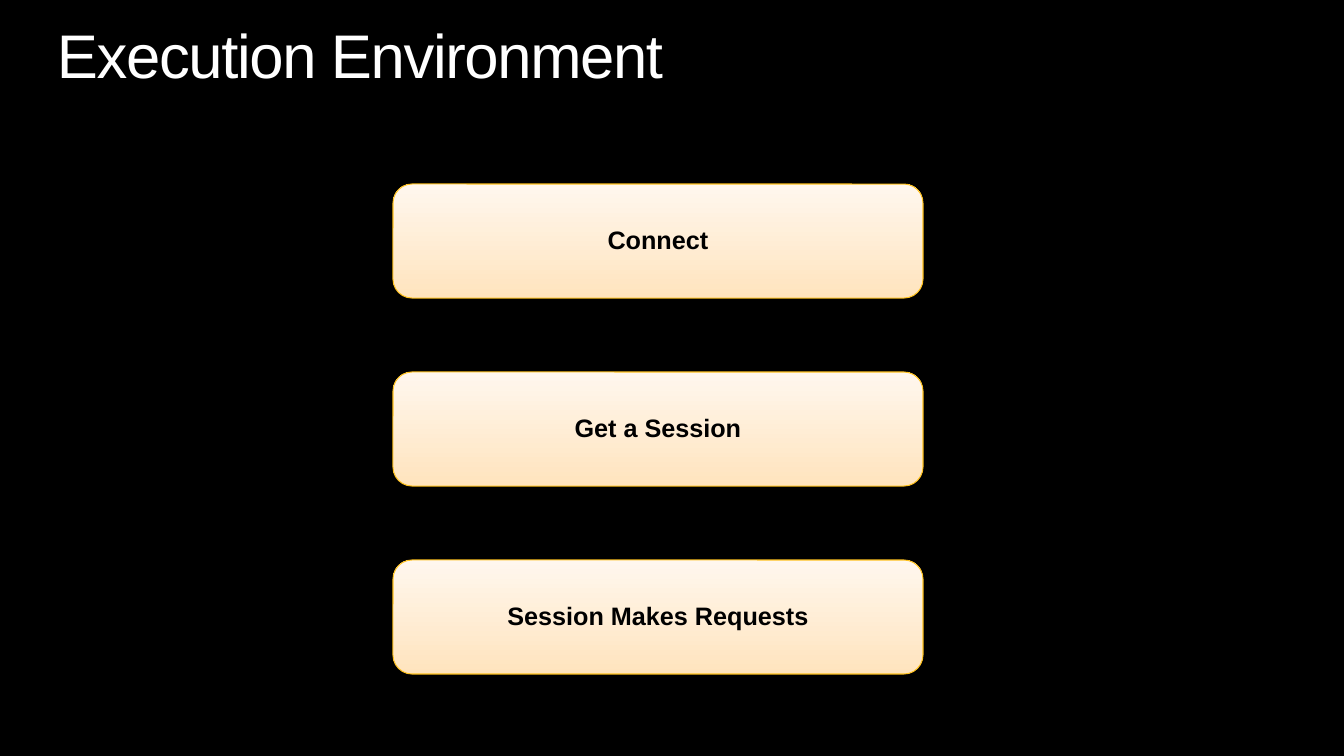
from pptx import Presentation
from pptx import util as u
from pptx.dml.color import RGBColor
from pptx.enum import shapes, text

W, H = 1344, 756
SCALE = 12192000 / W  # EMU per px
FONT = "Arial"
STEPS = ["Connect", "Get a Session", "Session Makes Requests"]
STEP_LEFT, STEP_TOP, STEP_W, STEP_H, STEP_PITCH = 393, 184, 530, 114, 188


def px(n):
    return u.Emu(round(n * SCALE))


def rgb(value):
    return RGBColor.from_string(value)


def set_frame(tf, anchor, margin):
    tf.word_wrap = True
    tf.vertical_anchor = anchor
    tf.margin_left = tf.margin_right = tf.margin_top = tf.margin_bottom = px(margin)


def set_paragraph(p, align, size, color, bold):
    p.alignment = align
    p.line_spacing = 0.9
    p.font.name = FONT
    p.font.size = u.Pt(size)
    p.font.bold = bold
    p.font.color.rgb = rgb(color)


def add_title(s, words):
    title = s.shapes.title
    title.left, title.top, title.width, title.height = px(57), px(25), px(1229), px(67)
    tf = title.text_frame
    tf.text = words
    set_frame(tf, text.MSO_ANCHOR.TOP, 0)
    p = tf.paragraphs[0]
    set_paragraph(p, text.PP_ALIGN.LEFT, 44, "FFFFFF", False)
    p.runs[0].font._element.set("spc", "-100")


def add_step(s, words, top):
    sp = s.shapes.add_shape(shapes.MSO_SHAPE.ROUNDED_RECTANGLE,
                            px(STEP_LEFT), px(top), px(STEP_W), px(STEP_H))
    sp.shadow.inherit = False
    sp.fill.gradient()
    sp.fill.gradient_angle = 90
    for stop, color in zip(sp.fill.gradient_stops, ("FFE4BE", "FFF7EE")):
        stop.color.rgb = rgb(color)
    sp.line.color.rgb = rgb("FFC21F")
    sp.line.width = u.Pt(0.75)
    tf = sp.text_frame
    tf.text = words
    set_frame(tf, text.MSO_ANCHOR.MIDDLE, 7)
    set_paragraph(tf.paragraphs[0], text.PP_ALIGN.CENTER, 18, "000000", True)


def main():
    prs = Presentation()
    prs.slide_width, prs.slide_height = px(W), px(H)
    s = prs.slides.add_slide(prs.slide_layouts[5])
    s.background.fill.solid()
    s.background.fill.fore_color.rgb = rgb("000000")
    add_title(s, "Execution Environment")
    for i, words in enumerate(STEPS):
        add_step(s, words, STEP_TOP + i * STEP_PITCH)
    prs.save("out.pptx")


if __name__ == "__main__":
    main()
